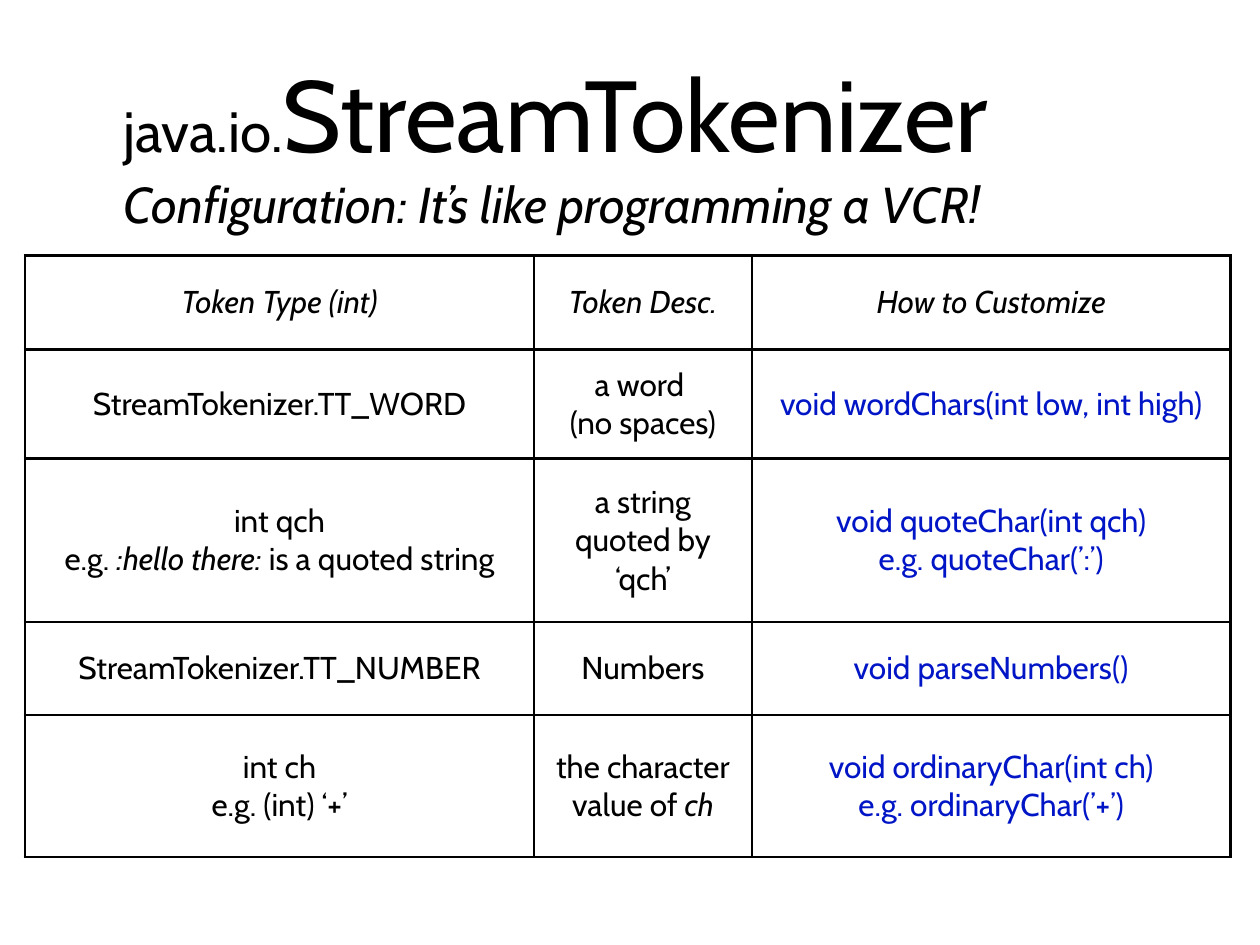
from dataclasses import dataclass

from lxml import etree
from pptx import Presentation
from pptx.dml.color import RGBColor
from pptx.enum.text import MSO_ANCHOR, PP_ALIGN
from pptx.oxml.ns import qn
from pptx.util import Cm, Pt

MIDDLE = MSO_ANCHOR.MIDDLE
CENTER = PP_ALIGN.CENTER
LEFT = PP_ALIGN.LEFT
FONT = "Cabin"
COLORS = {"ink": "000000", "call": "0015C6", "paper": "FFFFFF"}
SIDES = ("a:lnL", "a:lnR", "a:lnT", "a:lnB")
WIDTHS = (11.4, 4.88, 10.72)
HEIGHTS = (2.11, 2.44, 3.66, 2.08, 3.18)


@dataclass(frozen=True)
class Span:
    text: str
    size: int = 20
    italic: bool = False
    color: str = "ink"


@dataclass(frozen=True)
class Entry:
    lines: tuple[tuple[Span, ...], ...]


def plain(*texts: str, color: str = "ink", italic: bool = False) -> Entry:
    return Entry(tuple((Span(text, italic=italic, color=color),) for text in texts))


def call(*texts: str) -> Entry:
    return plain(*texts, color="call")


def head(text: str) -> Entry:
    return plain(text, italic=True)


TITLE = (
    (Span("java.io.", 36), Span("StreamTokenizer", 64)),
    (Span("Configuration: It’s like programming a VCR!", 32, True),),
)
ROWS = (
    (head("Token Type (int)"), head("Token Desc."), head("How to Customize")),
    (
        plain("StreamTokenizer.TT_WORD"),
        plain("a word ", "(no spaces)"),
        call("void wordChars(int low, int high)"),
    ),
    (
        Entry((
            (Span("int qch"),),
            (Span("e.g. "), Span(":hello there:", italic=True), Span(" is a quoted string")),
        )),
        plain("a string quoted by", "‘qch’"),
        call("void quoteChar(int qch)", "e.g. quoteChar(’:’)"),
    ),
    (plain("StreamTokenizer.TT_NUMBER"), plain("Numbers"), call("void parseNumbers()")),
    (
        plain("int ch", "e.g. (int) ‘+’"),
        Entry(((Span("the character value of "), Span("ch", italic=True)),)),
        call("void ordinaryChar(int ch)", "e.g. ordinaryChar(’+’)"),
    ),
)


def apply(target, values: dict) -> None:
    for name, value in values.items():
        setattr(target, name, value)


def write(para, spans: tuple[Span, ...]) -> None:
    for span in spans:
        run = para.add_run()
        run.text = span.text
        apply(run.font, {"name": FONT, "size": Pt(span.size), "italic": span.italic})
        run.font.color.rgb = RGBColor.from_string(COLORS[span.color])


def border(cell) -> None:
    props = cell._tc.get_or_add_tcPr()
    for spot, side in enumerate(SIDES):
        line = etree.Element(qn(side), w=str(Pt(2)))
        fill = etree.SubElement(line, qn("a:solidFill"))
        etree.SubElement(fill, qn("a:srgbClr"), val=COLORS["ink"])
        props.insert(spot, line)


def fill_cell(cell, entry: Entry) -> None:
    cell.vertical_anchor = MIDDLE
    cell.fill.background()
    border(cell)
    frame = cell.text_frame
    for spot, spans in enumerate(entry.lines):
        para = frame.add_paragraph() if spot else frame.paragraphs[0]
        para.alignment = CENTER
        write(para, spans)


def add_title(slide) -> None:
    box = slide.shapes.add_textbox(Cm(2.44), Cm(0.56), Cm(22.71), Cm(5.28))
    frame = box.text_frame
    apply(frame, {"word_wrap": True, "vertical_anchor": MIDDLE, "margin_left": Cm(0.33)})
    para = frame.paragraphs[0]
    apply(para, {"alignment": LEFT, "space_after": Pt(2)})
    for spot, spans in enumerate(TITLE):
        if spot:
            para.add_line_break()
        write(para, spans)


def add_grid(slide) -> None:
    shape = slide.shapes.add_table(
        len(HEIGHTS), len(WIDTHS), Cm(0.56), Cm(5.72), Cm(sum(WIDTHS)), Cm(sum(HEIGHTS))
    )
    table = shape.table
    apply(table, {"first_row": False, "horz_banding": False})
    for column, width in zip(table.columns, WIDTHS):
        column.width = Cm(width)
    for row, height, entries in zip(table.rows, HEIGHTS, ROWS):
        row.height = Cm(height)
        for cell, entry in zip(row.cells, entries):
            fill_cell(cell, entry)


def main() -> None:
    deck = Presentation()
    apply(deck, {"slide_width": Cm(28.22), "slide_height": Cm(21.16)})
    slide = deck.slides.add_slide(deck.slide_layouts[6])
    back = slide.background.fill
    back.solid()
    back.fore_color.rgb = RGBColor.from_string(COLORS["paper"])
    add_title(slide)
    add_grid(slide)
    deck.save("out.pptx")


if __name__ == "__main__":
    main()
